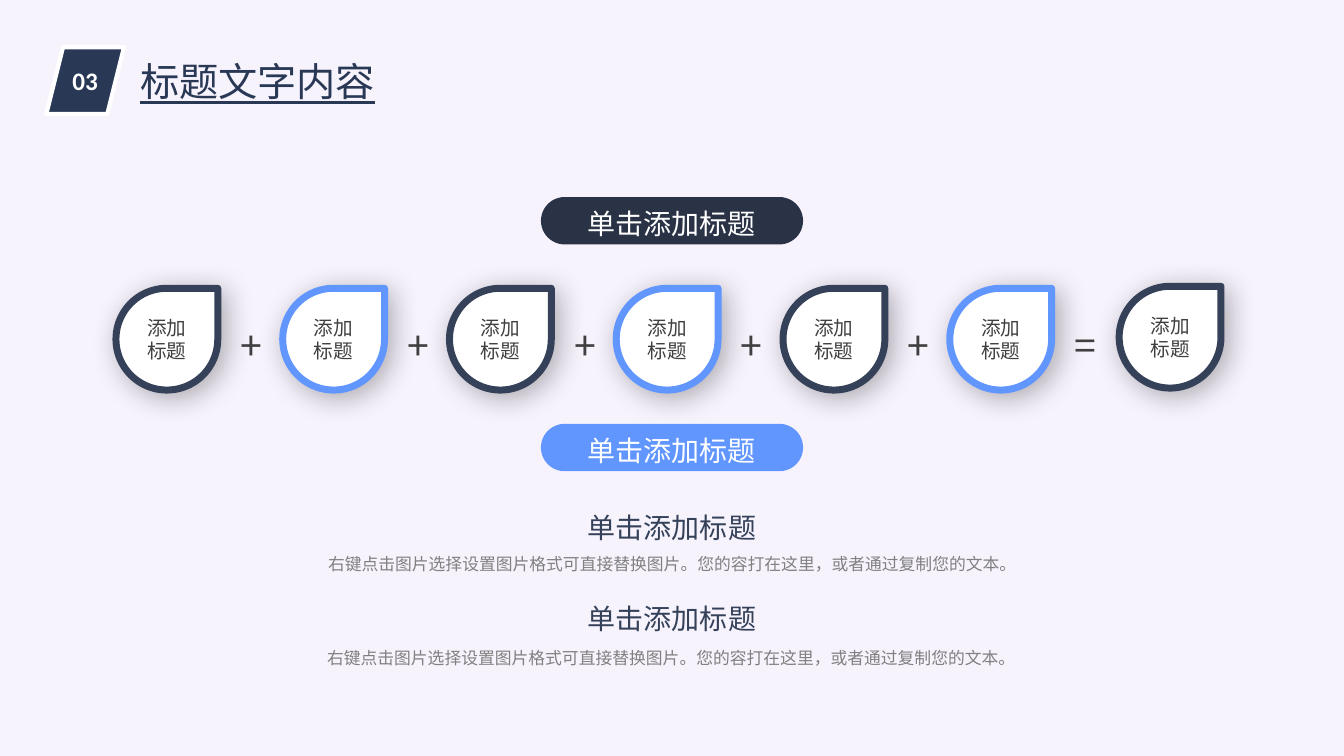
from lxml import etree
from pptx import Presentation
from pptx import util as u
from pptx.dml.color import RGBColor
from pptx.enum import shapes, text
from pptx.oxml import ns

COLORS = {
    "background": "F7F3FD",
    "title": "283855",
    "navy": "2A3246",
    "slate": "344159",
    "blue": "6196FF",
    "ink": "404040",
    "grey": "808080",
    "white": "FFFFFF",
    "black": "000000",
}
HEADING = "单击添加标题"
DETAIL = "右键点击图片选择设置图片格式可直接替换图片。您的容打在这里，或者通过复制您的文本。"


def color(name):
    return RGBColor.from_string(COLORS[name])


class SlideBuilder:
    font = "Noto Sans CJK SC"
    number_font = "Calibri"

    def __init__(self, slide):
        self.slide = slide
        slide.background.fill.solid()
        slide.background.fill.fore_color.rgb = color("background")

    def add_words(self, frame, words, size, ink, font=None, align=text.PP_ALIGN.CENTER,
                  spacing=1.0, bold=False, underline=False):
        font = font or self.font
        paragraph = frame.paragraphs[0]
        paragraph.alignment = align
        paragraph.line_spacing = spacing
        run = paragraph.add_run()
        run.text = words
        run.font.size = u.Pt(size)
        run.font.name = font
        run.font.bold = bold
        run.font.underline = underline
        run.font.color.rgb = color(ink)
        properties = run._r.get_or_add_rPr()
        east_asian = etree.SubElement(properties, ns.qn("a:ea"))
        east_asian.set("typeface", font)

    def title(self, words, box):
        heading = self.slide.shapes.title
        heading.left, heading.top, heading.width, heading.height = map(u.Inches, box)
        frame = heading.text_frame
        frame.word_wrap = True
        frame.auto_size = text.MSO_AUTO_SIZE.NONE
        frame.vertical_anchor = text.MSO_ANCHOR.TOP
        self.add_words(frame, words, 28, "title", underline=True)

    def shape(self, kind, box, fill, line=None, width=0):
        figure = self.slide.shapes.add_shape(kind, *map(u.Inches, box))
        figure.shadow.inherit = False
        figure.fill.solid()
        figure.fill.fore_color.rgb = color(fill)
        if line:
            figure.line.color.rgb = color(line)
            figure.line.width = u.Pt(width)
        else:
            figure.line.fill.background()
        figure.text_frame.vertical_anchor = text.MSO_ANCHOR.MIDDLE
        return figure

    def label(self, words, box, size, ink, wrap=True, inset=True,
              align=text.PP_ALIGN.CENTER):
        frame = self.slide.shapes.add_textbox(*map(u.Inches, box)).text_frame
        frame.word_wrap = wrap
        if not inset:
            frame.margin_left = frame.margin_right = 0
            frame.margin_top = frame.margin_bottom = 0
        self.add_words(frame, words, size, ink, align=align, spacing=1.3)

    def badge(self, number, box):
        badge = self.shape(shapes.MSO_SHAPE.PARALLELOGRAM, box, "title", "white", 3)
        self.add_words(badge.text_frame, number, 18, "white", self.number_font, bold=True)

    def pill(self, words, top, fill):
        pill = self.shape(shapes.MSO_SHAPE.ROUND_2_SAME_RECTANGLE,
                          (6.43, top - 1.01, 0.47, 2.6), fill)
        pill.adjustments[0] = pill.adjustments[1] = 0.5
        pill.rotation = 90
        self.label(words, (5.72, top, 1.88, 0.5), 20, "white", wrap=False)

    def drop(self, words, left, top, line):
        drop = self.shape(shapes.MSO_SHAPE.TEAR, (left, top, 1.01, 1.01),
                          "white", line, 5)
        self.add_words(drop.text_frame, words, 14, "ink")
        effects = drop._element.spPr.find(ns.qn("a:effectLst"))
        shadow = etree.SubElement(effects, ns.qn("a:outerShdw"), blurRad=str(u.Pt(20)),
                                  dist=str(u.Pt(5)), dir="2700000", algn="tl",
                                  rotWithShape="0")
        tint = etree.SubElement(shadow, ns.qn("a:srgbClr"), val=COLORS["black"])
        etree.SubElement(tint, ns.qn("a:alpha"), val="30000")

    def note(self, heading, detail, heading_top, detail_box):
        self.label(detail, detail_box, 12, "grey", inset=False)
        self.label(heading, (5.83, heading_top, 1.68, 0.39), 20, "slate",
                   wrap=False, inset=False, align=text.PP_ALIGN.LEFT)


def main():
    deck = Presentation()
    deck.slide_width, deck.slide_height = u.Inches(13.33), u.Inches(7.5)
    page = SlideBuilder(deck.slides.add_slide(deck.slide_layouts[5]))

    page.badge("03", (0.46, 0.47, 0.77, 0.66))
    page.title("标题文字内容", (1.23, 0.52, 2.65, 0.57))
    page.pill(HEADING, 1.9, "navy")

    last_left = 9.42
    step = (last_left - 1.15) / 5
    for index, sign in enumerate("+++++="):
        left = 1.15 + index * step
        page.drop("添加标题", left, 2.86, "blue" if index % 2 else "slate")
        page.label(sign, (left + 1.03, 3, 0.63, 0.41), 28, "ink")
    page.drop("添加标题", 11.1, 2.84, "slate")

    page.note(HEADING, DETAIL, 4.96, (1.63, 5.43, 10.08, 0.24))
    page.note(HEADING, DETAIL, 5.87, (1.7, 6.37, 9.92, 0.24))
    page.pill(HEADING, 4.15, "blue")
    deck.save("out.pptx")


if __name__ == "__main__":
    main()
